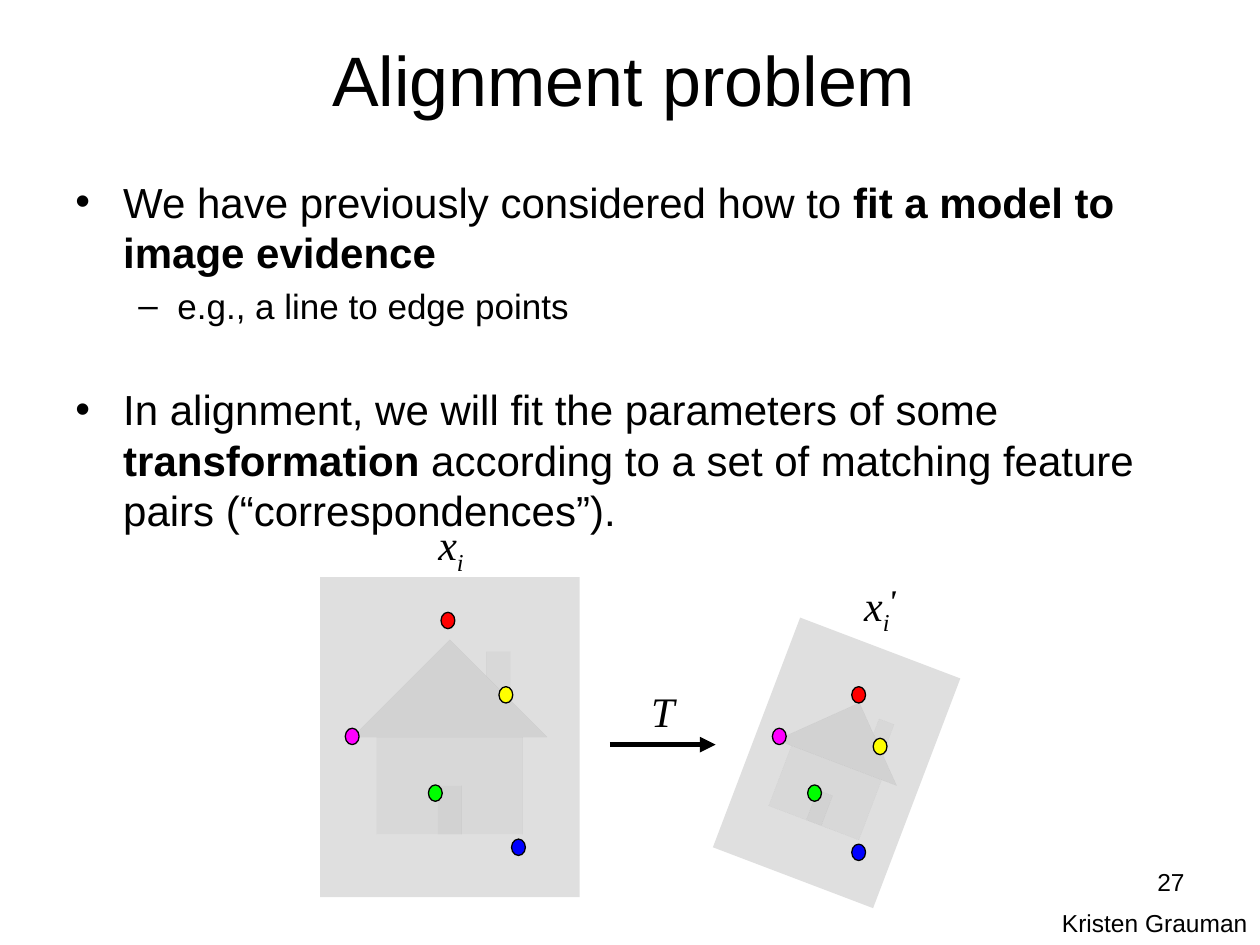
from lxml.etree import SubElement
from pptx import Presentation
from pptx.dml.color import RGBColor
from pptx.enum.shapes import MSO_CONNECTOR, MSO_SHAPE
from pptx.enum.text import MSO_ANCHOR, PP_ALIGN
from pptx.oxml.ns import qn
from pptx.util import Inches, Pt

SANS, SERIF = "Arial", "Times New Roman"
BLACK, GRAY = "000000", "808080"

# Body: bullet, size, left margin, hanging indent, space before, (text, bold) spans
BODY = [
    ("•", 24, 0.38, 0.38, 4.8, [("We have previously considered how to ", False),
                                ("fit a model to image evidence", True)]),
    ("–", 20, 0.81, 0.31, 4, [("e.g., a line to edge points", False)]),
    ("•", 24, 0.38, 0.38, 33, [("In alignment, we will fit the parameters of some ", False),
                               ("transformation", True),
                               (" according to a set of matching feature pairs "
                                "(“correspondences”).", False)]),
]

# Each house: its place, rotation, and the matching feature points by colour
HOUSES = [
    ((2.54, 4.58, 2.06, 2.54), 0,
     {"FF0000": (3.5, 4.86), "0000FF": (4.06, 6.66), "00FF00": (3.4, 6.23),
      "FF00FF": (2.74, 5.78), "FFFF00": (3.96, 5.45)}),
    ((5.96, 5.08, 1.36, 1.95), 20.8,
     {"FF0000": (6.76, 5.45), "0000FF": (6.76, 6.7), "00FF00": (6.41, 6.23),
      "FF00FF": (6.13, 5.78), "FFFF00": (6.93, 5.86)}),
]
DOT_SIZE = (0.11, 0.13)

# Math labels: place, size, bold, text, subscript
LABELS = [
    ((5.07, 5.39, 0.39, 0.5), 24, False, "T", ""),
    ((3.38, 4.07, 0.41, 0.5), 24, False, "x", "i"),
    ((6.76, 4.55, 0.41, 0.5), 24, False, "x", "i"),
    ((6.95, 4.56, 0.27, 0.4), 18, True, "'", ""),
]


def color(value):
    return RGBColor.from_string(value)


def add_box(page, place, wrap=True):
    box = page.shapes.add_textbox(*map(Inches, place))
    box.text_frame.word_wrap = wrap
    return box.text_frame


def add_span(para, text, size, name=SANS, bold=False, italic=False):
    span = para.add_run()
    span.text = text
    font = span.font
    font.size, font.name, font.bold, font.italic = Pt(size), name, bold, italic
    font.color.rgb = color(BLACK)
    return span


def add_line_of_text(page, place, text, size, align):
    frame = add_box(page, place)
    para = frame.paragraphs[0]
    para.alignment = align
    add_span(para, text, size)
    return frame


def set_bullet(para, mark, left, hanging):
    props = para._p.get_or_add_pPr()
    props.set("marL", str(Inches(left)))
    props.set("indent", str(-Inches(hanging)))
    SubElement(props, qn("a:buFont"), typeface=SANS)
    SubElement(props, qn("a:buChar"), char=mark)


def add_figure(page, kind, place, fill):
    shape = page.shapes.add_shape(kind, *map(Inches, place))
    shape.shadow.inherit = False
    shape.fill.solid()
    shape.fill.fore_color.rgb = color(fill)
    return shape


def add_house(page, place, rotation):
    house = add_figure(page, MSO_SHAPE.ACTION_BUTTON_HOME, place, GRAY)
    house.rotation = rotation
    house.line.fill.background()
    tint = house._element.spPr.find(qn("a:solidFill"))[0]
    SubElement(tint, qn("a:alpha"), val="25000")


def add_dot(page, corner, fill):
    dot = add_figure(page, MSO_SHAPE.OVAL, corner + DOT_SIZE, fill)
    dot.line.color.rgb = color(BLACK)
    dot.line.width = Pt(0.75)


def add_arrow(page, start, end):
    arrow = page.shapes.add_connector(MSO_CONNECTOR.STRAIGHT, *map(Inches, start + end))
    arrow.line.color.rgb = color(BLACK)
    arrow.line.width = Pt(3)
    SubElement(arrow.line._get_or_add_ln(), qn("a:tailEnd"), type="triangle")
    SubElement(arrow._element.spPr, qn("a:effectLst"))


def main():
    deck = Presentation()
    deck.slide_width, deck.slide_height = Inches(10), Inches(7.5)
    page = deck.slides.add_slide(deck.slide_layouts[6])

    # Title
    title = add_line_of_text(page, (0.45, 0, 9, 1.25), "Alignment problem", 40, PP_ALIGN.CENTER)
    title.vertical_anchor = MSO_ANCHOR.MIDDLE

    # Bulleted body
    body = add_box(page, (0.5, 1.35, 9, 3.2))
    for index, (mark, size, left, hanging, before, spans) in enumerate(BODY):
        para = body.add_paragraph() if index else body.paragraphs[0]
        para.space_before = Pt(before)
        set_bullet(para, mark, left, hanging)
        for text, bold in spans:
            add_span(para, text, size, bold=bold)

    # Houses, feature points and the transformation arrow
    add_arrow(page, (4.84, 5.91), (5.68, 5.91))
    for place, rotation, points in HOUSES:
        add_house(page, place, rotation)
        for fill, corner in points.items():
            add_dot(page, corner, fill)

    # Math labels
    for place, size, bold, text, subscript in LABELS:
        para = add_box(page, place, wrap=False).paragraphs[0]
        add_span(para, text, size, SERIF, bold, italic=True)
        if subscript:
            span = add_span(para, subscript, size, SERIF, bold, italic=True)
            span.font._element.set("baseline", "-25000")

    # Credit, with no right margin so it fits on one line, and page number
    credit = add_line_of_text(page, (8.33, 7.16, 1.67, 0.34), "Kristen Grauman", 14, PP_ALIGN.LEFT)
    credit.margin_right = 0
    add_line_of_text(page, (7.17, 6.83, 2.33, 0.52), "27", 14, PP_ALIGN.RIGHT)

    deck.save("out.pptx")


if __name__ == "__main__":
    main()
